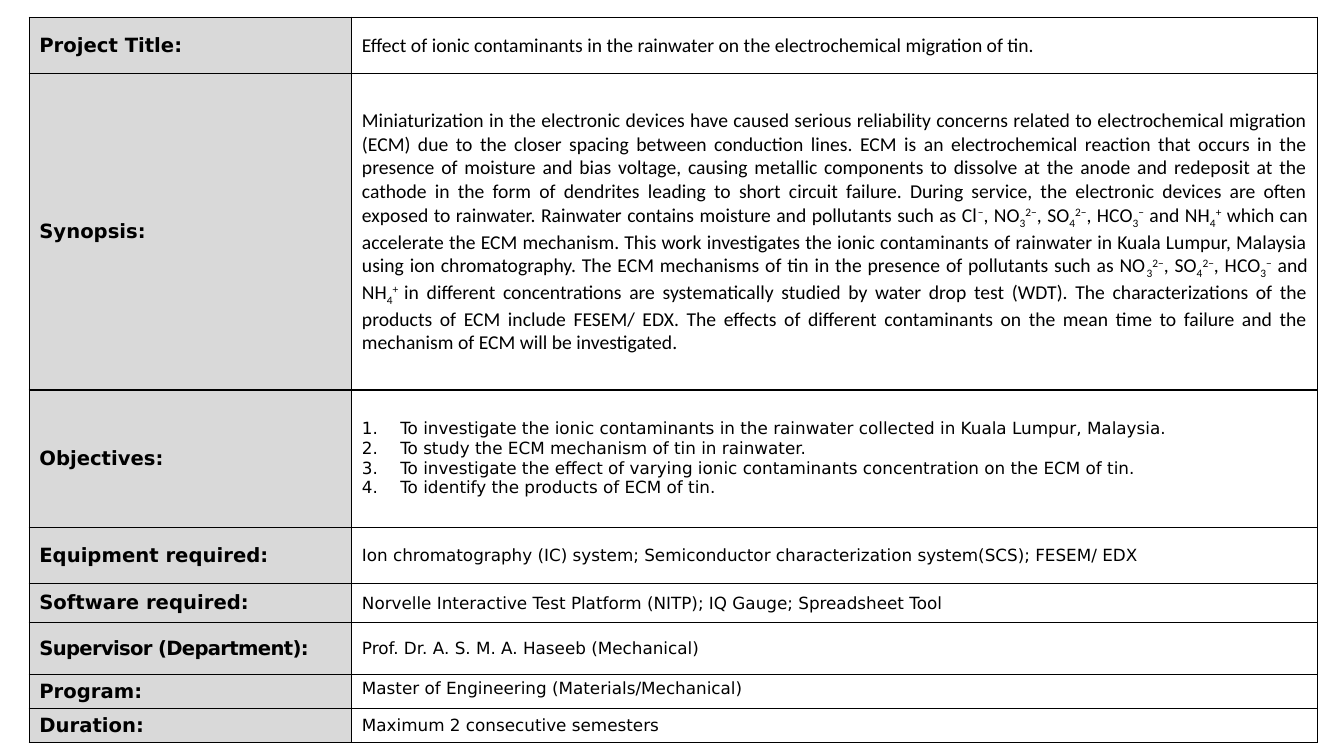
import pptx
import pptx.dml.color
import pptx.enum.text
import pptx.oxml.ns
import pptx.util
from lxml import etree
from pptx.util import Inches

COLORS = {"label": "D9D9D9", "text": "000000", "border": "000000"}
LABEL = {"name": "DejaVu Sans", "size": pptx.util.Pt(14), "bold": True}
PROSE = {"name": "Calibri", "size": pptx.util.Pt(14), "bold": False}
DETAIL = {"name": "DejaVu Sans", "size": pptx.util.Pt(12), "bold": False}

# A piece after "|" is raised when it starts with "^", lowered when with "_"
BASELINES = {"^": "30000", "_": "-25000"}
IONS = "NO|_3|^2−|, SO|_4|^2−|, HCO|_3|^−| and NH|_4"

TITLE = ("Effect of ionic contaminants in the rainwater on the "
         "electrochemical migration of tin.")
SYNOPSIS = (
    "Miniaturization in the electronic devices have caused serious reliability "
    "concerns related to electrochemical migration (ECM) due to the closer spacing "
    "between conduction lines. ECM is an electrochemical reaction that occurs in the "
    "presence of moisture and bias voltage, causing metallic components to dissolve at "
    "the anode and redeposit at the cathode in the form of dendrites leading to short "
    "circuit failure. During service, the electronic devices are often exposed to "
    "rainwater. Rainwater contains moisture and pollutants such as "
    f"Cl|^−|, {IONS}|^+| which can accelerate the ECM mechanism. This work "
    "investigates the ionic contaminants of rainwater in Kuala Lumpur, Malaysia using "
    "ion chromatography. The ECM mechanisms of tin in the presence of pollutants such "
    f"as {IONS}|^+ |in different concentrations are systematically studied by water "
    "drop test (WDT). The characterizations of the products of ECM include FESEM/ EDX. "
    "The effects of different contaminants on the mean time to failure and the "
    "mechanism of ECM will be investigated.")
OBJECTIVES = [
    "To investigate the ionic contaminants in the rainwater collected in Kuala Lumpur, Malaysia.",
    "To study the ECM mechanism of tin in rainwater.",
    "To investigate the effect of varying ionic contaminants concentration on the ECM of tin.",
    "To identify the products of ECM of tin.",
]

# Label, row height, paragraphs, text format
PROJECT = [
    ("Project Title:", 0.56, [TITLE], PROSE),
    ("Synopsis:", 3.14, [SYNOPSIS], PROSE),
    ("Objectives:", 1.36, OBJECTIVES, DETAIL),
    ("Equipment required:", 0.56,
     ["Ion chromatography (IC) system; Semiconductor characterization system(SCS); FESEM/ EDX"],
     DETAIL),
    ("Software required:", 0.39,
     ["Norvelle Interactive Test Platform (NITP); IQ Gauge; Spreadsheet Tool"], DETAIL),
    ("Supervisor (Department):", 0.51, ["Prof. Dr. A. S. M. A. Haseeb (Mechanical)"], DETAIL),
    ("Program:", 0.34, ["Master of Engineering (Materials/Mechanical)"], DETAIL),
    ("Duration:", 0.34, ["Maximum 2 consecutive semesters"], DETAIL),
]


def rgb(role):
    return pptx.dml.color.RGBColor.from_string(COLORS[role])


def add_borders(cell):
    properties = cell._tc.get_or_add_tcPr()
    for side in ("lnL", "lnR", "lnT", "lnB"):
        border = etree.SubElement(properties, pptx.oxml.ns.qn(f"a:{side}"), w="12700")
        fill = etree.SubElement(border, pptx.oxml.ns.qn("a:solidFill"))
        etree.SubElement(fill, pptx.oxml.ns.qn("a:srgbClr"), val=COLORS["border"])


def add_text(paragraph, text, text_format):
    for piece in text.split("|"):
        run = paragraph.add_run()
        baseline = BASELINES.get(piece[0])
        run.text = piece[1:] if baseline else piece
        for attribute, value in text_format.items():
            setattr(run.font, attribute, value)
        run.font.color.rgb = rgb("text")
        if baseline:
            run.font._element.set("baseline", baseline)


def number_paragraph(paragraph):
    properties = paragraph._p.get_or_add_pPr()
    properties.set("marL", str(Inches(0.38)))
    properties.set("indent", str(-Inches(0.38)))
    etree.SubElement(properties, pptx.oxml.ns.qn("a:buAutoNum"), type="arabicPeriod")


def fill_cell(cell, texts, text_format):
    add_borders(cell)
    cell.fill.background()
    cell.vertical_anchor = pptx.enum.text.MSO_ANCHOR.MIDDLE
    for index, text in enumerate(texts):
        paragraph = cell.text_frame.add_paragraph() if index else cell.text_frame.paragraphs[0]
        add_text(paragraph, text, text_format)
        if len(texts) > 1:
            number_paragraph(paragraph)


def add_project_table(slide):
    table = slide.shapes.add_table(len(PROJECT), 2, Inches(0.29), Inches(0.17),
                                   Inches(12.78), Inches(7.2)).table
    table.first_row = table.horz_banding = False
    for column, width in zip(table.columns, (3.2, 9.58)):
        column.width = Inches(width)
    for row, (label, height, texts, text_format) in zip(table.rows, PROJECT):
        row.height = Inches(height)
        label_cell, detail_cell = row.cells
        fill_cell(label_cell, [label], LABEL)
        label_cell.fill.solid()
        label_cell.fill.fore_color.rgb = rgb("label")
        fill_cell(detail_cell, texts, text_format)
    return table


def main():
    deck = pptx.Presentation()
    deck.slide_width, deck.slide_height = Inches(13.33), Inches(7.5)
    slide = deck.slides.add_slide(deck.slide_layouts[6])
    table = add_project_table(slide)

    # Rows that depart from the common layout
    synopsis, supervisor, program = table.cell(1, 1), table.cell(5, 0), table.cell(6, 1)
    synopsis.text_frame.paragraphs[0].alignment = pptx.enum.text.PP_ALIGN.JUSTIFY
    supervisor.margin_right = 0
    supervisor.text_frame.paragraphs[0].runs[0].font._element.set("spc", "-50")
    program.vertical_anchor = pptx.enum.text.MSO_ANCHOR.TOP

    deck.save("out.pptx")


if __name__ == "__main__":
    main()
